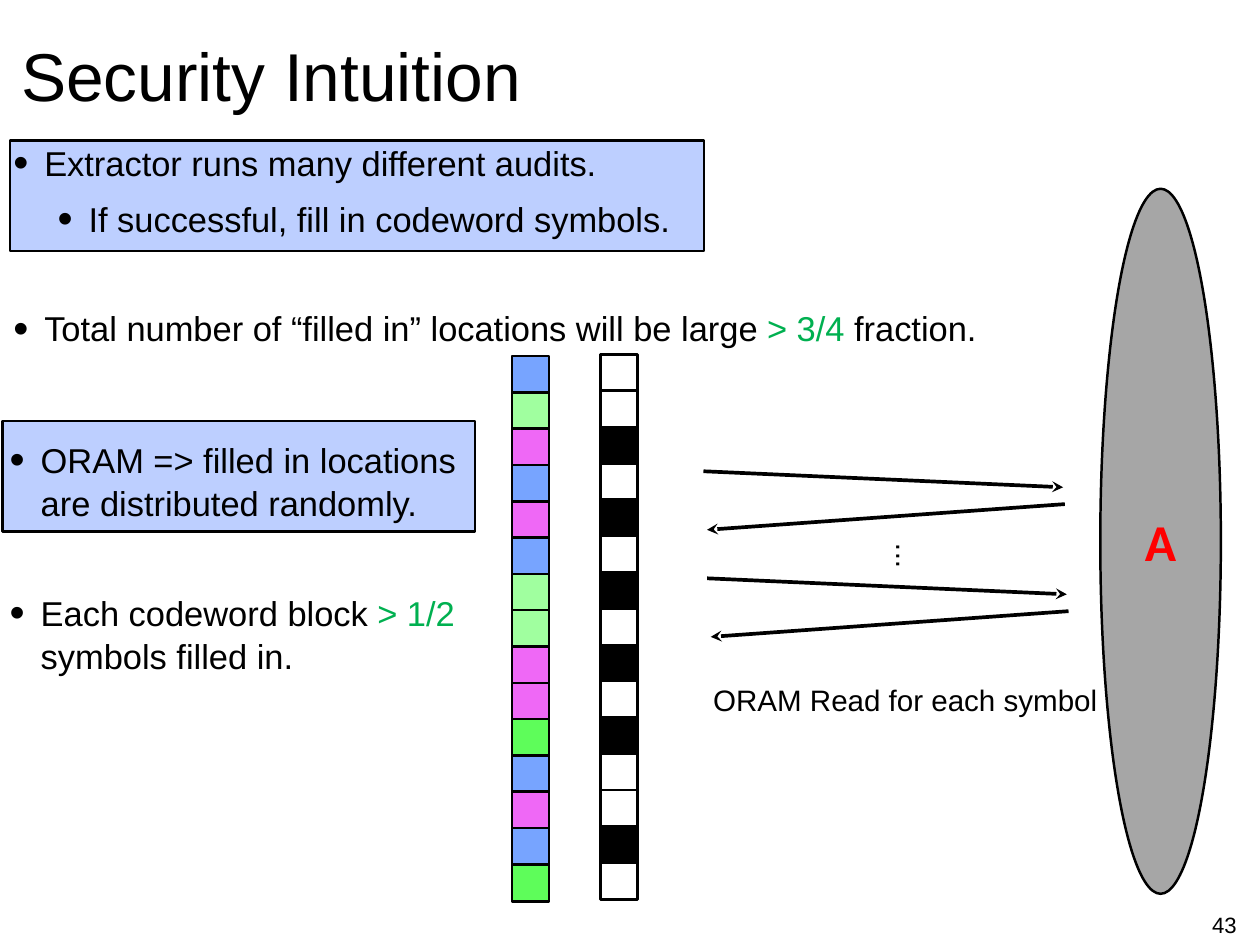
from lxml import etree
from pptx import Presentation
from pptx import util as u
from pptx.dml.color import RGBColor
from pptx.enum import shapes, text
from pptx.oxml.ns import qn

COLORS = {
    "black": "000000", "white": "FFFFFF", "panel": "BDCFFF", "accent": "00B050",
    "adversary": "A6A6A6", "red": "FF0000", "blue": "77A4FF", "mint": "A0FF9F",
    "pink": "EF68F6", "green": "5EFD5A",
}
TITLE = "Security Intuition"
AUDIT_POINTS = [
    (0, 0, [("Extractor runs many different audits.", "black")]),
    (1, 10, [("If successful, fill in codeword symbols.", "black")]),
    (0, 53.8, [("Total number of “filled in” locations will be large ", "black"),
               ("> 3/4 ", "accent"), ("fraction.", "black")]),
]
ORAM_POINTS = [
    (0, 0, [("ORAM => filled in locations are distributed randomly.", "black")]),
    (0, 53.8, [("Each codeword block ", "black"), ("> 1/2 ", "accent"),
               ("symbols filled in.", "black")]),
]
PANELS = [(8, 114, 564, 90), (2, 342, 384, 90)]
CODEWORD = ["blue", "mint", "pink", "blue", "pink", "blue", "mint", "mint",
            "pink", "pink", "green", "blue", "pink", "blue", "green"]
FILLED = {2, 4, 6, 8, 10, 13}
LOCATIONS = ["black" if i in FILLED else "white" for i in range(len(CODEWORD))]
COLUMNS = [(416, 289.4, CODEWORD), (488, 288, LOCATIONS)]
CELL, PITCH = 30.2, 29.5
REQUEST = (571.7, 383, 864, 396)
REPLY = (865.4, 409.7, 574.6, 430.6)
ROUND_SHIFTS = [(0, 0), (3, 87)]
LABELS = [
    ((579.6, 554.4, 315.4, 28.8), "ORAM Read for each symbol", 24, 0),
    ((707, 429.8, 28.8, 35.3), "...", 24, 270),
    ((985, 737.3, 28.8, 28), "43", 18, 0),
]

deck = Presentation()
deck.slide_width, deck.slide_height = u.Pt(1024), u.Pt(768)
slide = deck.slides.add_slide(deck.slide_layouts[3])
title, audits, oram = slide.placeholders


def color(name):
    return RGBColor.from_string(COLORS[name])


def pts(values):
    return [u.Pt(v) for v in values]


def place(holder, box, anchor):
    holder.left, holder.top, holder.width, holder.height = pts(box)
    frame = holder.text_frame
    frame.margin_left = frame.margin_top = frame.margin_right = frame.margin_bottom = 0
    frame.auto_size = text.MSO_AUTO_SIZE.NONE
    frame.vertical_anchor = anchor
    return frame


def style(paragraph, size, fill="black", face="Arial", align=text.PP_ALIGN.LEFT):
    paragraph.font.size, paragraph.font.name = u.Pt(size), face
    paragraph.font.color.rgb = color(fill)
    paragraph.alignment = align


def add_bullet(paragraph, indent):
    props = paragraph._p.get_or_add_pPr()
    props.set("marL", str(u.Pt(indent)))
    props.set("indent", str(u.Pt(-25.2)))
    for tag, key, value in (("a:buSzPct", "val", "125000"),
                            ("a:buFont", "typeface", "Arial"),
                            ("a:buChar", "char", "•")):
        bullet = etree.Element(qn(tag), {key: value})
        props.insert_element_before(bullet, "a:tabLst", "a:defRPr", "a:extLst")


def fill_list(holder, box, points):
    frame = place(holder, box, text.MSO_ANCHOR.TOP)
    for i, (level, gap, pieces) in enumerate(points):
        point = frame.paragraphs[0] if i == 0 else frame.add_paragraph()
        point.level = level
        point.space_before, point.line_spacing = u.Pt(gap), 1.05
        style(point, 28)
        add_bullet(point, 25.2 + 36 * level)
        for words, hue in pieces:
            run = point.add_run()
            run.text = words
            run.font.color.rgb = color(hue)


def add_block(kind, box, hue):
    block = slide.shapes.add_shape(kind, *pts(box))
    block.shadow.inherit = False
    block.fill.solid()
    block.fill.fore_color.rgb = color(hue)
    block.line.color.rgb = color("black")
    block.line.width = u.Pt(2)
    return block


def add_arrow(ends):
    arrow = slide.shapes.add_connector(shapes.MSO_CONNECTOR.STRAIGHT, *pts(ends))
    arrow.line.color.rgb = color("black")
    arrow.line.width = u.Pt(3)
    etree.SubElement(arrow.line._get_or_add_ln(), qn("a:tailEnd"), type="stealth")
    etree.SubElement(arrow._element.spPr, qn("a:effectLst"))


heading = place(title, (17.3, 25.2, 997, 69.8), text.MSO_ANCHOR.MIDDLE)
heading.text = TITLE
style(heading.paragraphs[0], 55)
fill_list(audits, (10.8, 113.8, 993, 175), AUDIT_POINTS)
fill_list(oram, (7.9, 354.8, 383.8, 131), ORAM_POINTS)

for box in PANELS:
    panel = add_block(shapes.MSO_SHAPE.RECTANGLE, box, "panel")
    title._element.addprevious(panel._element)

for left, top, hues in COLUMNS:
    for i, hue in enumerate(hues):
        add_block(shapes.MSO_SHAPE.RECTANGLE, (left, top + i * PITCH, CELL, CELL), hue)

for dx, dy in ROUND_SHIFTS:
    for x1, y1, x2, y2 in (REQUEST, REPLY):
        add_arrow((x1 + dx, y1 + dy, x2 + dx, y2 + dy))

adversary = add_block(shapes.MSO_SHAPE.OVAL, (894.2, 153.4, 98, 573), "adversary")
adversary.text_frame.text = "A"
letter = adversary.text_frame.paragraphs[0]
style(letter, 42, "red", "Calibri", text.PP_ALIGN.CENTER)
letter.font.bold = True

for box, words, size, turn in LABELS:
    label = slide.shapes.add_textbox(*pts(box))
    label.rotation = turn
    frame = place(label, box, text.MSO_ANCHOR.MIDDLE)
    frame.word_wrap = False
    frame.text = words
    style(frame.paragraphs[0], size)

deck.save("out.pptx")
